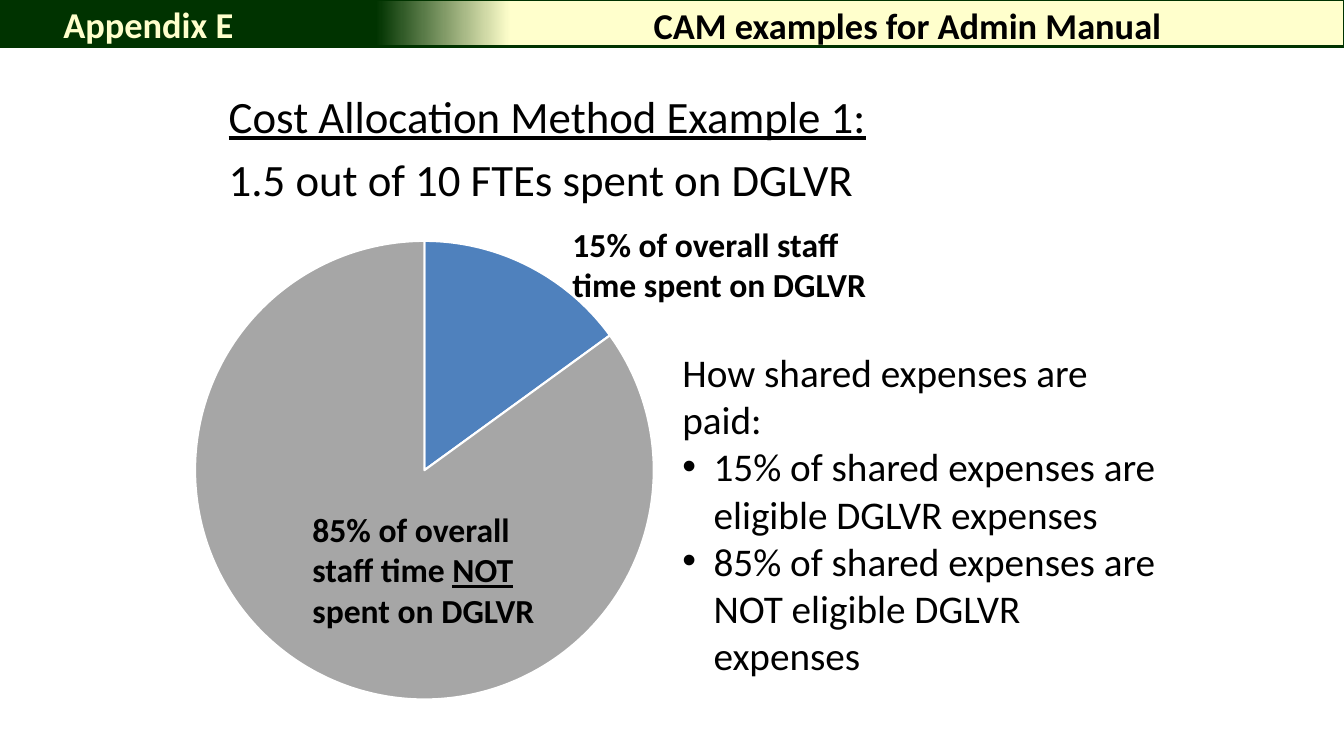
from lxml import etree
from pptx import Presentation
from pptx.chart.data import CategoryChartData
from pptx.dml.color import RGBColor
from pptx.enum.chart import XL_CHART_TYPE
from pptx.enum.shapes import MSO_SHAPE
from pptx.enum.text import MSO_ANCHOR, PP_ALIGN
from pptx.oxml import parse_xml
from pptx.oxml.ns import nsdecls, qn
from pptx.util import Inches, Pt

FONT = "Calibri"
COLORS = {
    "black": "000000",
    "white": "FFFFFF",
    "green": "003300",
    "cream": "FFFFCC",
    "blue": "4F81BD",
    "red": "C0504D",
    "gray": "A6A6A6",
}

# Each paragraph is a list of (text, underlined) spans.
TEXTS = [
    {"at": (2.17, 0.83, 9, 1.4), "size": 32, "space_before": 6.4, "paragraphs": [
        [("Cost Allocation Method Example 1:", True)],
        [("1.5 out of 10 FTEs spent on DGLVR", False)]]},
    {"at": (5.58, 2.17, 3.33, 0.91), "size": 24, "bold": True, "paragraphs": [
        [("15% of overall staff time spent on DGLVR", False)]]},
    {"at": (3, 5, 2.42, 1.31), "size": 24, "bold": True, "paragraphs": [
        [("85% of overall staff time ", False), ("NOT", True), (" spent on DGLVR", False)]]},
    {"at": (6.67, 3.41, 5, 3.4), "size": 28, "bullets_from": 1, "paragraphs": [
        [("How shared expenses are paid:", False)],
        [("15% of shared expenses are eligible DGLVR expenses", False)],
        [("85% of shared expenses are NOT eligible DGLVR expenses", False)]]},
    {"at": (4.67, 0, 8.67, 0.5), "size": 26, "bold": True, "middle": True,
     "align": PP_ALIGN.CENTER, "paragraphs": [[("CAM examples for Admin Manual", False)]]},
    {"at": (0.53, -0.01, 4.8, 0.5), "size": 26, "bold": True, "middle": True,
     "color": "cream", "paragraphs": [[("Appendix E", False)]]},
]
HEADER = {"at": (0, 0, 13.33, 0.46), "stops": [(0.28, "green"), (0.38, "cream")]}
PIE = {
    "at": (0.75, 2.25, 6.92, 4.83),
    "diameter": 4.55,
    "slices": [("1", 15, "blue"), ("2", 0, "red"), ("3", 85, "gray")],
}
BULLET_INDENT = 0.31


def rgb(name):
    return RGBColor.from_string(COLORS[name])


def lengths(values):
    return [Inches(value) for value in values]


def add_header(page):
    band = page.shapes.add_shape(MSO_SHAPE.RECTANGLE, *lengths(HEADER["at"]))
    band.shadow.inherit = False
    band.fill.gradient()
    band.fill.gradient_angle = 0
    for stop, (position, color) in zip(band.fill.gradient_stops, HEADER["stops"]):
        stop.position = position
        stop.color.rgb = rgb(color)
    band.line.color.rgb = rgb("green")
    band.line.width = Pt(2)


def fix_plot_area(chart, width, height):
    """Centre the pie at its fixed diameter within the chart frame."""
    shares = {"w": PIE["diameter"] / width, "h": PIE["diameter"] / height}
    places = {"x": (1 - shares["w"]) / 2, "y": (1 - shares["h"]) / 2, **shares}
    modes = "".join(f'<c:{axis}Mode val="edge"/>' for axis in "xy")
    values = "".join(f'<c:{key} val="{share:.3f}"/>' for key, share in places.items())
    layout = parse_xml(
        f'<c:layout {nsdecls("c")}><c:manualLayout><c:layoutTarget val="inner"/>'
        f"{modes}{values}</c:manualLayout></c:layout>")
    plot_area = chart.plots[0]._element.getparent()
    for old in plot_area.findall(qn("c:layout")):
        plot_area.remove(old)
    plot_area.insert(0, layout)


def add_pie(page):
    data = CategoryChartData()
    data.categories = [name for name, _, _ in PIE["slices"]]
    data.add_series("Series 1", [value for _, value, _ in PIE["slices"]])
    frame = page.shapes.add_chart(XL_CHART_TYPE.PIE, *lengths(PIE["at"]), data)
    chart = frame.chart
    chart.has_legend = False
    chart.has_title = False
    chart.font.name = FONT
    chart.font.size = Pt(10)
    chart.font.color.rgb = rgb("black")
    plot = chart.plots[0]
    plot.vary_by_categories = True
    for index, (_, _, color) in enumerate(PIE["slices"]):
        style = plot.series[0].points[index].format
        style.fill.solid()
        style.fill.fore_color.rgb = rgb(color)
        style.line.color.rgb = rgb("white")
        style.line.width = Pt(1.5)
    fix_plot_area(chart, *PIE["at"][2:])


def add_bullet(para):
    properties = para._p.get_or_add_pPr()
    properties.set("marL", str(Inches(BULLET_INDENT)))
    properties.set("indent", str(-Inches(BULLET_INDENT)))
    etree.SubElement(properties, qn("a:buFont")).set("typeface", "Arial")
    etree.SubElement(properties, qn("a:buChar")).set("char", "•")


def add_text(page, item):
    frame = page.shapes.add_textbox(*lengths(item["at"])).text_frame
    frame.word_wrap = True
    frame.vertical_anchor = MSO_ANCHOR.MIDDLE if item.get("middle") else MSO_ANCHOR.TOP
    paragraphs = item["paragraphs"]
    for index, spans in enumerate(paragraphs):
        para = frame.add_paragraph() if index else frame.paragraphs[0]
        para.alignment = item.get("align", PP_ALIGN.LEFT)
        para.space_before = Pt(item.get("space_before", 0))
        if index >= item.get("bullets_from", len(paragraphs)):
            add_bullet(para)
        for text, underlined in spans:
            span = para.add_run()
            span.text = text
            look = {"name": FONT, "size": Pt(item["size"]),
                    "bold": item.get("bold", False), "underline": underlined}
            for attribute, value in look.items():
                setattr(span.font, attribute, value)
            span.font.color.rgb = rgb(item.get("color", "black"))


def main():
    deck = Presentation()
    deck.slide_width, deck.slide_height = lengths((13.33, 7.5))
    page = deck.slides.add_slide(deck.slide_layouts[6])
    add_header(page)
    add_pie(page)
    for item in TEXTS:
        add_text(page, item)
    deck.save("out.pptx")


if __name__ == "__main__":
    main()
